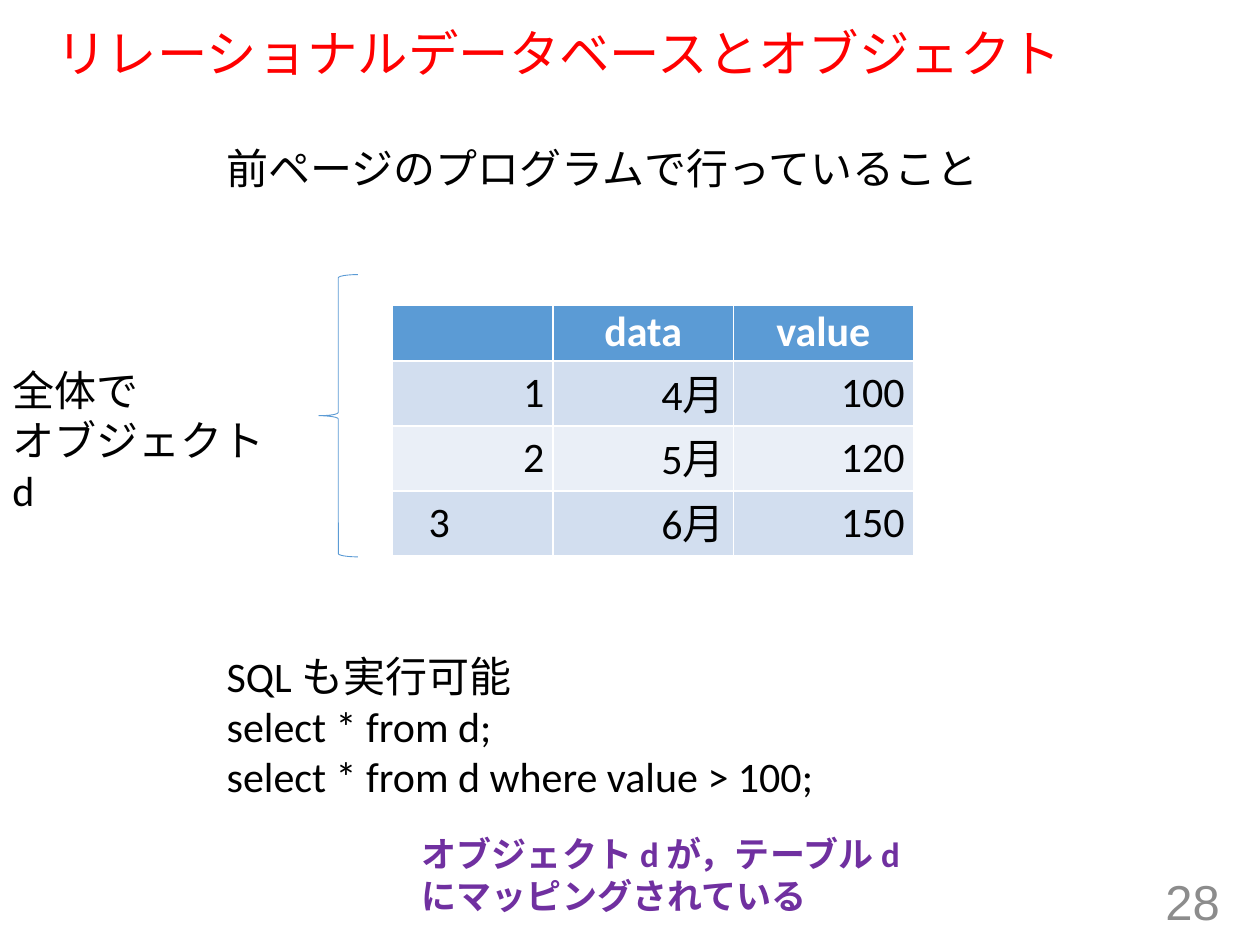
from dataclasses import dataclass

from pptx import Presentation
from pptx.dml.color import RGBColor
from pptx.enum.shapes import MSO_SHAPE
from pptx.enum.text import MSO_ANCHOR as Anchor, MSO_AUTO_SIZE as AutoSize, PP_ALIGN as Align
from pptx.util import Inches, Pt


@dataclass(frozen=True)
class Theme:
    ink: str = "000000"
    title: str = "FF0000"
    accent: str = "5B9BD5"
    bands: tuple = ("D2DEEF", "EAEFF7")
    header_ink: str = "FFFFFF"
    note: str = "7030A0"
    muted: str = "8C8C8C"
    body_font: str = "Calibri"
    title_font: str = "Arial"
    title_size: float = 28.8
    number_size: float = 28
    body_size: float = 24
    note_size: float = 20


THEME = Theme()
ROWS = [
    ("", "data", "value"),
    ("1", "4月", "100"),
    ("2", "5月", "120"),
    ("3", "6月", "150"),
]


def rgb(value):
    return RGBColor.from_string(value)


def write(frame, text, size=THEME.body_size, color=THEME.ink, font=THEME.body_font,
          bold=False, align=Align.LEFT, spacing=None):
    """Fill a text frame, one paragraph for each line of text."""
    for i, line in enumerate(text.split("\n")):
        paragraph = frame.add_paragraph() if i else frame.paragraphs[0]
        paragraph.alignment = align
        if spacing:
            paragraph.line_spacing = spacing
        run = paragraph.add_run()
        run.text = line
        run.font.size = Pt(size)
        run.font.name = font
        run.font.bold = bold
        run.font.color.rgb = rgb(color)


def add_text(slide, box, text, wrap=False, grow=True, anchor=Anchor.TOP, **style):
    frame = slide.shapes.add_textbox(*map(Inches, box)).text_frame
    frame.word_wrap = wrap
    frame.auto_size = AutoSize.SHAPE_TO_FIT_TEXT if grow else AutoSize.NONE
    frame.vertical_anchor = anchor
    write(frame, text, **style)


def add_frame_texts(slide, title_box, number_box):
    fixed = dict(wrap=True, grow=False, anchor=Anchor.MIDDLE, font=THEME.title_font)
    add_text(slide, title_box, "リレーショナルデータベースとオブジェクト",
             size=THEME.title_size, color=THEME.title, spacing=0.9, **fixed)
    add_text(slide, number_box, "28", size=THEME.number_size,
             color=THEME.muted, align=Align.RIGHT, **fixed)


def add_data_table(slide, box):
    table = slide.shapes.add_table(len(ROWS), len(ROWS[0]), *map(Inches, box)).table
    for column, width in zip(table.columns, (1.28, 1.43, 1.43)):
        column.width = Inches(width)
    for r, values in enumerate(ROWS):
        table.rows[r].height = Inches(0.35)
        for c, value in enumerate(values):
            cell = table.cell(r, c)
            cell.margin_left = cell.margin_right = Inches(0.07)
            cell.margin_top = cell.margin_bottom = Inches(0.04)
            cell.fill.solid()
            cell.fill.fore_color.rgb = rgb(THEME.bands[(r - 1) % 2] if r else THEME.accent)
            if r:
                cell.vertical_anchor = Anchor.MIDDLE
                write(cell.text_frame, value, align=Align.RIGHT, spacing=0.9)
            elif value:
                write(cell.text_frame, value, color=THEME.header_ink, bold=True,
                      align=Align.CENTER, spacing=0.9)
    # The last row number sits further in from the right edge
    table.cell(len(ROWS) - 1, 0).margin_right = Inches(0.82)


def add_object_label(slide, label_box, brace_box):
    brace = slide.shapes.add_shape(MSO_SHAPE.LEFT_BRACE, *map(Inches, brace_box))
    brace.shadow.inherit = False
    brace.fill.background()
    brace.line.color.rgb = rgb(THEME.accent)
    brace.line.width = Pt(0.5)
    add_text(slide, label_box, "全体で\nオブジェクト d", wrap=True)


def add_sql_notes(slide, sql_box, mapping_box):
    add_text(slide, sql_box,
             "SQL も実行可能\nselect * from d;\nselect * from d where value > 100;")
    add_text(slide, mapping_box, "オブジェクト d が，テーブル d\nにマッピングされている",
             size=THEME.note_size, color=THEME.note, bold=True)


def main():
    deck = Presentation()
    deck.slide_width, deck.slide_height = Inches(10), Inches(7.5)
    slide = deck.slides.add_slide(deck.slide_layouts[6])

    # Title and page number
    add_frame_texts(slide, (0.35, 0.19, 9.25, 0.51), (7.53, 6.95, 2.25, 0.4))
    # Data table with its heading and brace
    add_data_table(slide, (3.11, 2.42, 4.14, 1.4))
    add_text(slide, (1.7, 1.08, 6.26, 0.5), "前ページのプログラムで行っていること")
    add_object_label(slide, (0, 2.84, 2.4, 0.91), (2.53, 2.18, 0.31, 2.24))
    # SQL examples and mapping remark
    add_sql_notes(slide, (1.7, 5.11, 4.98, 1.31), (3.25, 6.56, 4.2, 0.77))

    deck.save("out.pptx")


if __name__ == "__main__":
    main()
